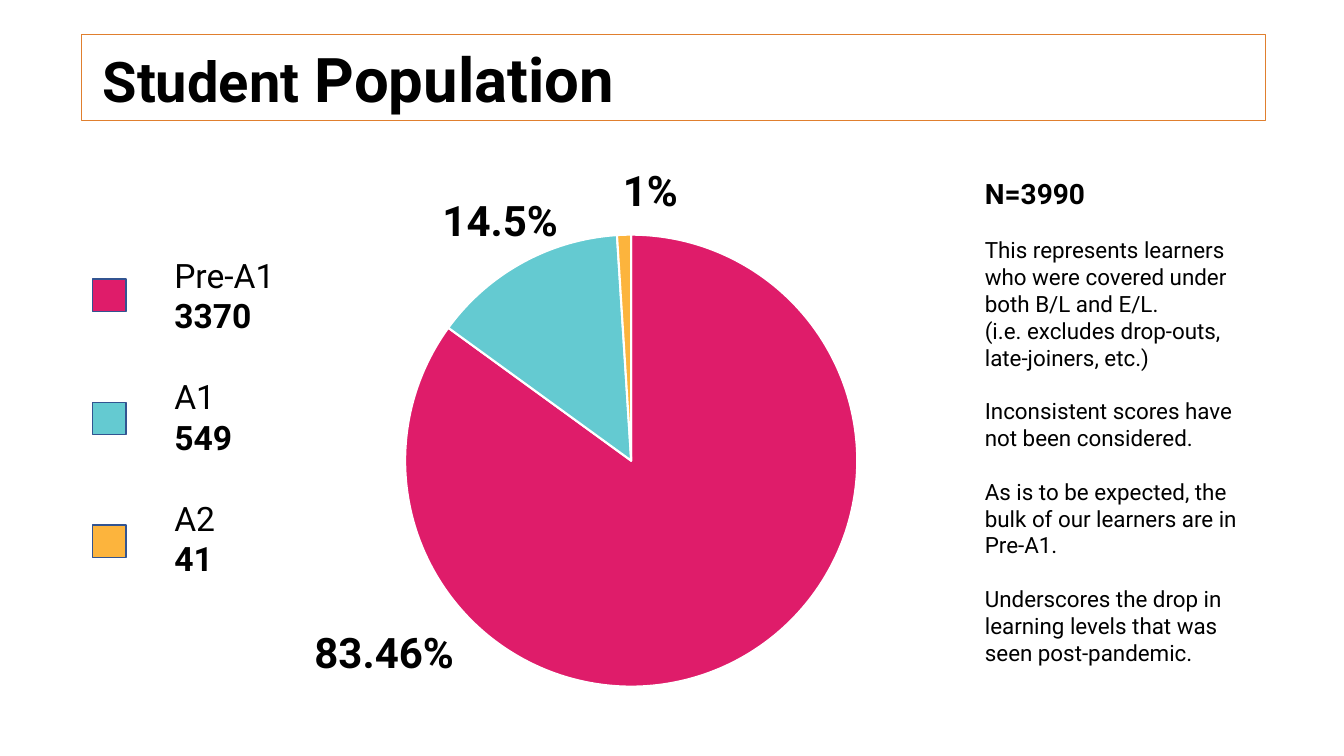
from pptx import Presentation
from pptx import util as u
from pptx.chart.data import CategoryChartData
from pptx.dml.color import RGBColor
from pptx.enum import chart as charts, shapes, text

COLORS = {
    "ink": "000000",
    "paper": "FFFFFF",
    "frame": "E07F2E",
    "swatch_line": "325491",
    "Pre-A1": "DF1C6A",
    "A1": "64CAD1",
    "A2": "FCB43D",
}
LEVELS = [("Pre-A1", "3370", 85), ("A1", "549", 14), ("A2", "41", 1)]
SHARES = [
    ("83.46%", 22.66, 82.27, 12.9),
    ("14.5%", 32.18, 25.07, 11.48),
    ("1%", 45.61, 21.07, 8.93),
]
NOTES = [
    ("N=3990", 20, True, 0),
    ("This represents learners who were covered under both B/L and E/L.", 16, False, 19),
    ("(i.e. excludes drop-outs, late-joiners, etc.)", 16, False, 0),
    ("Inconsistent scores have not been considered.", 16, False, 19),
    ("As is to be expected, the bulk of our learners are in Pre-A1.", 16, False, 19),
    ("Underscores the drop in learning levels that was seen post-pandemic.", 16, False, 19),
]

deck = Presentation()
deck.slide_width, deck.slide_height = u.Inches(13.33), u.Inches(7.5)
slide = deck.slides.add_slide(deck.slide_layouts[6])


def percent_box(left, top, width, height):
    across, down = deck.slide_width / 100, deck.slide_height / 100
    return [int(n) for n in (left * across, top * down, width * across, height * down)]


def add_lines(box, lines):
    frame = slide.shapes.add_textbox(*percent_box(*box)).text_frame
    frame.word_wrap = True
    for i, (words, size, bold, gap) in enumerate(lines):
        line = frame.add_paragraph() if i else frame.paragraphs[0]
        line.text = words
        line.space_before = u.Pt(gap)
        line.font.name, line.font.size, line.font.bold = "Roboto", u.Pt(size), bold
        line.font.color.rgb = RGBColor.from_string(COLORS["ink"])
    return frame


title_frame = slide.shapes.add_shape(
    shapes.MSO_SHAPE.RECTANGLE, *percent_box(6.08, 4.53, 88.07, 11.47))
title_frame.shadow.inherit = False
title_frame.fill.background()
title_frame.line.color.rgb = RGBColor.from_string(COLORS["frame"])
title_frame.line.width = u.Pt(0.75)

title = add_lines((6.9, 5.2, 45.99, 11.47), [("Student", 40, True, 0)])
title.vertical_anchor = text.MSO_ANCHOR.MIDDLE
title.paragraphs[0].line_spacing = 0.9
population = title.paragraphs[0].add_run()
population.text = " Population"
population.font.size = u.Pt(44)

population_data = CategoryChartData()
population_data.categories = ["1", "2", "3"]
population_data.add_series("Series 1", [value for _, _, value in LEVELS])
pie = slide.shapes.add_chart(
    charts.XL_CHART_TYPE.PIE, *percent_box(3.83, 29.2, 86.27, 63.47), population_data).chart
pie.has_legend = False
pie.has_title = False
pie.font.name, pie.font.size = "Calibri", u.Pt(10)
pie.font.color.rgb = RGBColor.from_string(COLORS["ink"])
pie.plots[0].vary_by_categories = True

for i, (level, _, _) in enumerate(LEVELS):
    slice_format = pie.plots[0].series[0].points[i].format
    slice_format.fill.solid()
    slice_format.fill.fore_color.rgb = RGBColor.from_string(COLORS[level])
    slice_format.line.color.rgb = RGBColor.from_string(COLORS["paper"])
    slice_format.line.width = u.Pt(1.5)

    swatch = slide.shapes.add_shape(
        shapes.MSO_SHAPE.RECTANGLE, *percent_box(6.9, 36.93 + 16.27 * i, 2.48, 4.27))
    swatch.shadow.inherit = False
    swatch.fill.solid()
    swatch.fill.fore_color.rgb = RGBColor.from_string(COLORS[level])
    swatch.line.color.rgb = RGBColor.from_string(COLORS["swatch_line"])
    swatch.line.width = u.Pt(1)

legend_lines = []
for i, (level, count, _) in enumerate(LEVELS):
    legend_lines += [(level, 24, False, 29 if i else 0), (count, 24, True, 0)]
add_lines((12.23, 33.07, 11.48, 44.4), legend_lines)

for share, left, top, width in SHARES:
    add_lines((left, top, width, 8.13), [(share, 30, True, 0)])

add_lines((72.54, 22.67, 21.38, 70.4), NOTES)

deck.save("out.pptx")
